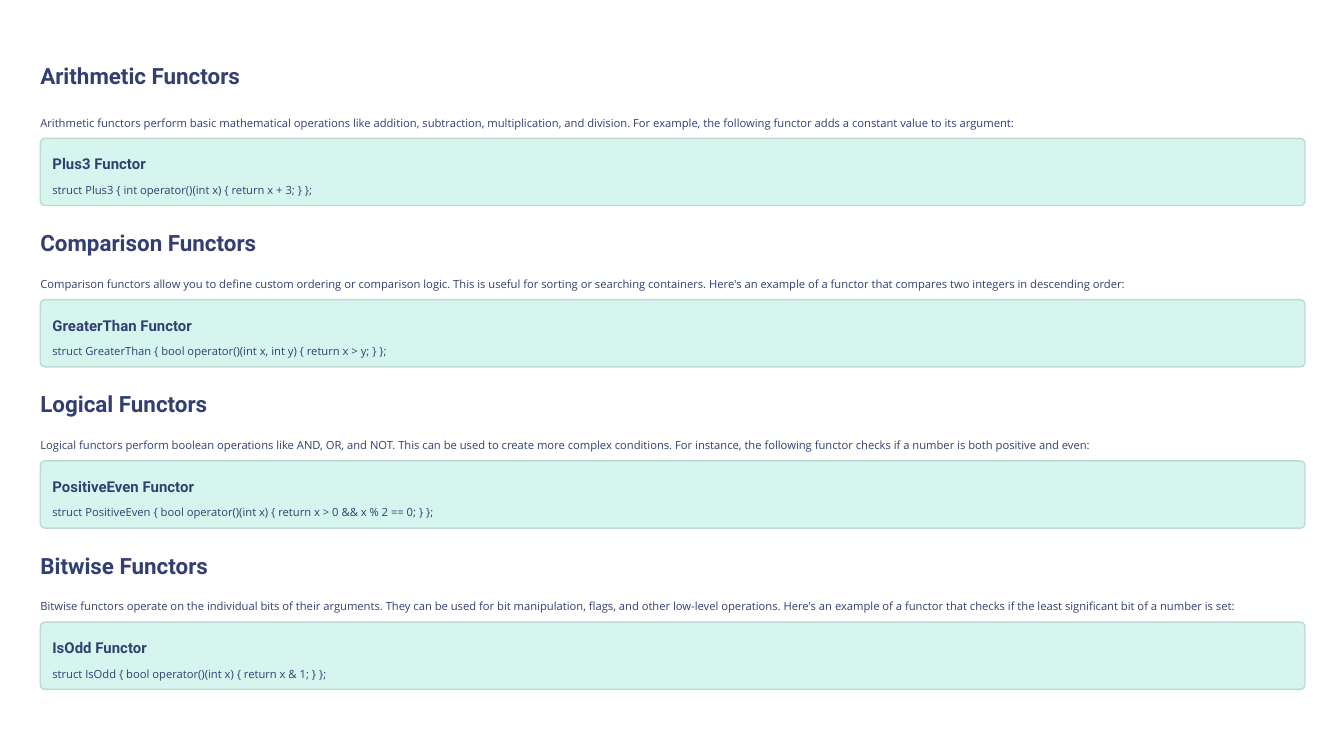
from collections import namedtuple

from pptx import Presentation
from pptx.dml.color import RGBColor
from pptx.enum.shapes import MSO_SHAPE
from pptx.util import Inches, Pt

ROUNDED = MSO_SHAPE.ROUNDED_RECTANGLE

NAVY = RGBColor(0x33, 0x3F, 0x70)
MINT = RGBColor(0xD6, 0xF5, 0xEE)
MINT_EDGE = RGBColor(0xBC, 0xDB, 0xD4)
WHITE = RGBColor(0xFF, 0xFF, 0xFF)

# Each style: font format values and line spacing
HEADING = {"name": "Roboto", "size": Pt(12), "bold": True}, 1.23
CARD_TITLE = {"name": "Roboto", "size": Pt(8), "bold": True}, 1.25
BODY = {"name": "Open Sans", "size": Pt(6), "bold": False}, 1.63

PAGE_WIDTH = Inches(10)
PAGE_HEIGHT = PAGE_WIDTH * 9 // 16
LEFT, WIDTH = 0.3, 9.41
PADDING = 0.09
CARD_HEIGHT = 0.5
FIRST_CARD_TOP, SECTION_PITCH = 1.03, 1.2

Section = namedtuple(
    "Section", "heading heading_top heading_width description title title_width code")

SECTIONS = [
    Section(
        "Arithmetic Functors", 0.42, 2.17,
        "Arithmetic functors perform basic mathematical operations like addition, "
        "subtraction, multiplication, and division. For example, the following "
        "functor adds a constant value to its argument:",
        "Plus3 Functor", 1.06,
        "struct Plus3 { int operator()(int x) { return x + 3; } };"),
    Section(
        "Comparison Functors", 1.66, 2.33,
        "Comparison functors allow you to define custom ordering or comparison "
        "logic. This is useful for sorting or searching containers. Here's an "
        "example of a functor that compares two integers in descending order:",
        "GreaterThan Functor", 1.79,
        "struct GreaterThan { bool operator()(int x, int y) { return x > y; } };"),
    Section(
        "Logical Functors", 2.86, 1.79,
        "Logical functors perform boolean operations like AND, OR, and NOT. This "
        "can be used to create more complex conditions. For instance, the "
        "following functor checks if a number is both positive and even:",
        "PositiveEven Functor", 1.9,
        "struct PositiveEven { bool operator()(int x) "
        "{ return x > 0 && x % 2 == 0; } };"),
    Section(
        "Bitwise Functors", 4.06, 1.82,
        "Bitwise functors operate on the individual bits of their arguments. They "
        "can be used for bit manipulation, flags, and other low-level operations. "
        "Here's an example of a functor that checks if the least significant bit "
        "of a number is set:",
        "IsOdd Functor", 1.06,
        "struct IsOdd { bool operator()(int x) { return x & 1; } };"),
]


def add_text(slide, text, left, top, width, height, style):
    font_format, line_spacing = style
    box = slide.shapes.add_textbox(
        Inches(left), Inches(top), Inches(width), Inches(height))
    frame = box.text_frame
    frame.word_wrap = True
    for side in ("left", "top", "right", "bottom"):
        setattr(frame, f"margin_{side}", 0)
    para = frame.paragraphs[0]
    para.line_spacing = line_spacing
    span = para.add_run()
    span.text = text
    span.font.color.rgb = NAVY
    for attribute, value in font_format.items():
        setattr(span.font, attribute, value)


def add_card(slide, top):
    card = slide.shapes.add_shape(
        ROUNDED, Inches(LEFT), Inches(top), Inches(WIDTH), Inches(CARD_HEIGHT))
    card.adjustments[0] = 0.07
    card.shadow.inherit = False
    card.fill.solid()
    card.fill.fore_color.rgb = MINT
    card.line.color.rgb = MINT_EDGE
    card.line.width = Pt(0.75)


def add_section(slide, section, card_top):
    """Add a heading and description above a card with a code example."""
    inner_left = LEFT + PADDING
    add_text(slide, section.heading, LEFT, section.heading_top,
             section.heading_width, 0.21, HEADING)
    add_text(slide, section.description, LEFT, card_top - 0.23, WIDTH, 0.14, BODY)
    add_card(slide, card_top)
    add_text(slide, section.title, inner_left, card_top + PADDING,
             section.title_width, 0.13, CARD_TITLE)
    add_text(slide, section.code, inner_left, card_top + 0.27,
             WIDTH - 2 * PADDING, 0.14, BODY)


def main():
    deck = Presentation()
    deck.slide_width, deck.slide_height = PAGE_WIDTH, PAGE_HEIGHT
    slide = deck.slides.add_slide(deck.slide_layouts[6])
    slide.background.fill.solid()
    slide.background.fill.fore_color.rgb = WHITE
    for index, section in enumerate(SECTIONS):
        add_section(slide, section, FIRST_CARD_TOP + index * SECTION_PITCH)
    deck.save("out.pptx")


if __name__ == "__main__":
    main()
